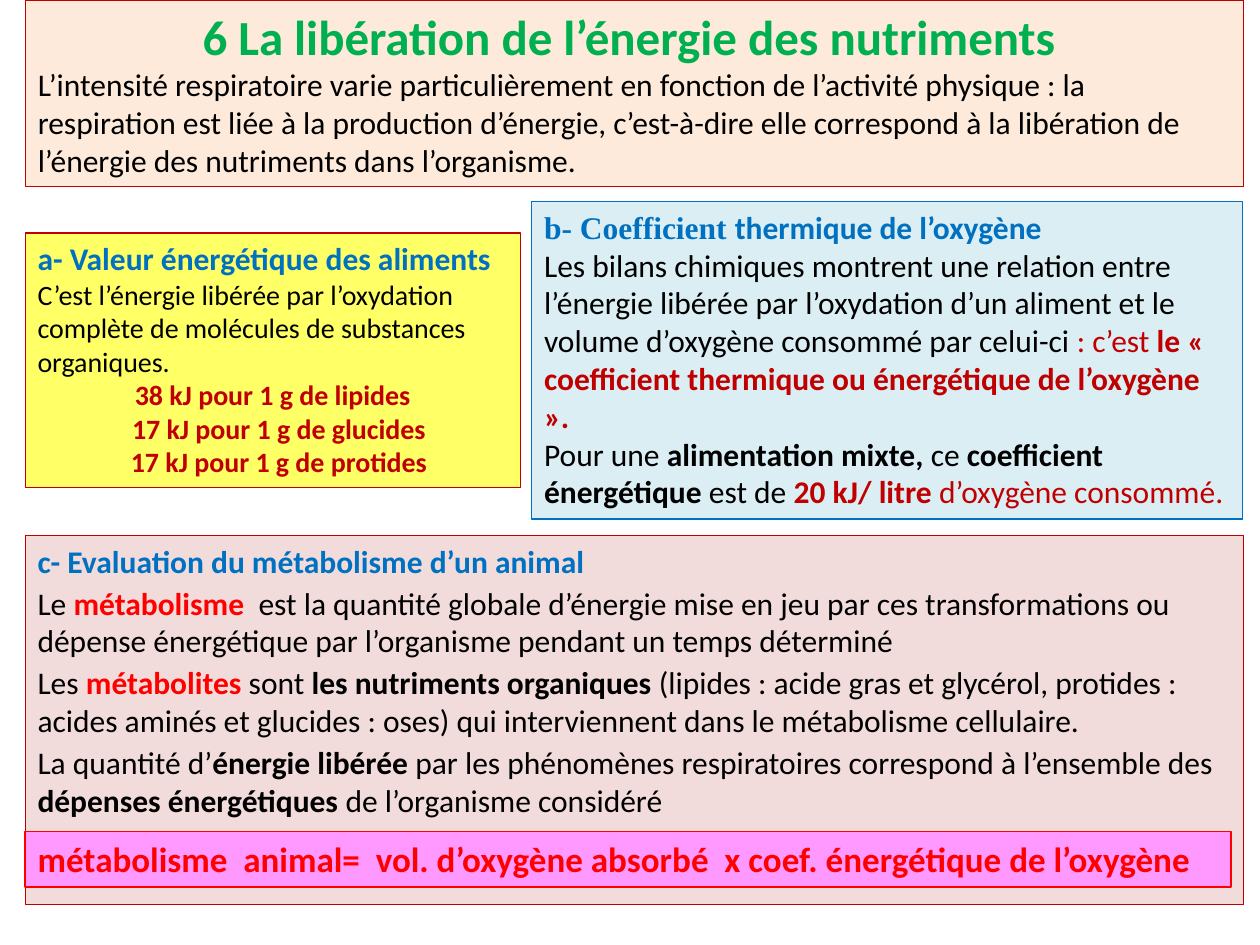
from pptx import Presentation
from pptx.dml.color import RGBColor
from pptx.enum.shapes import MSO_SHAPE
from pptx.enum.text import MSO_ANCHOR, MSO_AUTO_SIZE, PP_ALIGN
from pptx.util import Inches, Pt

BLACK = RGBColor(0x00, 0x00, 0x00)
GREEN = RGBColor(0x00, 0xB0, 0x50)
BLUE = RGBColor(0x00, 0x70, 0xC0)
DARK_RED = RGBColor(0xC0, 0x00, 0x00)
RED = RGBColor(0xFF, 0x00, 0x00)
PEACH = RGBColor(0xFD, 0xEA, 0xDA)
YELLOW = RGBColor(0xFF, 0xFF, 0x66)
PALE_BLUE = RGBColor(0xDB, 0xEE, 0xF4)
ROSE = RGBColor(0xF2, 0xDC, 0xDB)
PINK = RGBColor(0xFF, 0x99, 0xFF)

BODY_FONT = "Calibri"
FRAME = {"word_wrap": True, "vertical_anchor": MSO_ANCHOR.TOP,
         "auto_size": MSO_AUTO_SIZE.SHAPE_TO_FIT_TEXT,
         "margin_left": Inches(0.1), "margin_right": Inches(0.1),
         "margin_top": Inches(0.05), "margin_bottom": Inches(0.05)}
ITEM_GAP = Pt(2.4)

# Run styles: (bold, colour)
PLAIN = (False, BLACK)
STRONG = (True, BLACK)
HEADING = (True, BLUE)
KEY = (True, DARK_RED)
KEY_PLAIN = (False, DARK_RED)
TERM = (True, RED)


def style_panel(panel, box, fill, outline, width=0.75):
    """Place a panel, colour it and return its prepared text frame."""
    panel.left, panel.top, panel.width, panel.height = (Inches(v) for v in box)
    panel.fill.solid()
    panel.fill.fore_color.rgb = fill
    panel.line.color.rgb = outline
    panel.line.width = Pt(width)
    for name, value in FRAME.items():
        setattr(panel.text_frame, name, value)
    return panel.text_frame


def add_panel(slide, box, fill, outline, width=0.75):
    panel = slide.shapes.add_shape(MSO_SHAPE.RECTANGLE, *(Inches(v) for v in box))
    panel.shadow.inherit = False
    return style_panel(panel, box, fill, outline, width)


def write(frame, runs, size=18, align=PP_ALIGN.LEFT, gap=Pt(0), indent=0):
    """Add one paragraph made of (text, style[, font]) runs."""
    first = not frame.text
    paragraph = frame.paragraphs[0] if first else frame.add_paragraph()
    paragraph.alignment = align
    paragraph.space_before = Pt(0) if first else gap
    if indent:
        paragraph._p.get_or_add_pPr().set("marL", str(Inches(indent)))
    for text, (bold, colour), *font in runs:
        run = paragraph.add_run()
        run.text = text
        run.font.color.rgb = colour
        look = {"name": font[0] if font else BODY_FONT, "size": Pt(size), "bold": bold}
        for name, value in look.items():
            setattr(run.font, name, value)


def fill_header(slide, box):
    frame = style_panel(slide.shapes.title, box, PEACH, DARK_RED)
    write(frame, [("6 La libération de l’énergie des nutriments ", (True, GREEN))],
          size=28, align=PP_ALIGN.CENTER)
    write(frame, [("L’intensité respiratoire varie particulièrement en fonction de "
                   "l’activité physique : la respiration est liée à la production "
                   "d’énergie, c’est-à-dire elle correspond à la libération de "
                   "l’énergie des nutriments dans l’organisme.", PLAIN)])


def add_energy_value(slide, box):
    frame = add_panel(slide, box, YELLOW, DARK_RED)
    write(frame, [("a- Valeur énergétique des aliments", HEADING)])
    write(frame, [("C’est l’énergie libérée par l’oxydation complète de molécules "
                   "de substances organiques.", PLAIN)], size=16)
    for energy, nutrient, indent in ((38, "lipides", 0), (17, "glucides", 0.1),
                                     (17, "protides", 0.1)):
        write(frame, [(f"{energy} kJ pour 1 g de {nutrient}", KEY)],
              size=16, align=PP_ALIGN.CENTER, indent=indent)


def add_oxygen_coefficient(slide, box):
    frame = add_panel(slide, box, PALE_BLUE, BLUE)
    write(frame, [("b- Coefficient ", HEADING, "Times New Roman"),
                  ("thermique de l’oxygène", HEADING)])
    write(frame, [("Les bilans chimiques montrent une relation entre l’énergie libérée "
                   "par l’oxydation d’un aliment et le volume d’oxygène consommé par "
                   "celui-ci", PLAIN),
                  (" : c’est ", KEY_PLAIN),
                  ("le « coefficient thermique ou énergétique de l’oxygène ».", KEY)])
    write(frame, [("Pour une ", PLAIN), ("alimentation mixte, ", STRONG),
                  ("ce ", PLAIN), ("coefficient énergétique", STRONG),
                  (" est de ", PLAIN), ("20 kJ/ litre ", KEY),
                  ("d’oxygène consommé.", KEY_PLAIN)])


def add_metabolism(slide, box):
    left, top, width, _ = box
    frame = add_panel(slide, box, ROSE, DARK_RED)
    paragraphs = (
        [("c- Evaluation du métabolisme d’un animal", HEADING)],
        [("Le ", PLAIN), ("métabolisme", TERM),
         ("  est la quantité globale d’énergie mise en jeu par ces transformations ou "
          "dépense énergétique par l’organisme pendant un temps déterminé", PLAIN)],
        [("Les ", PLAIN), ("métabolites ", TERM), ("sont ", PLAIN),
         ("les nutriments organiques ", STRONG),
         ("(lipides : acide gras et glycérol, protides : acides aminés et glucides : "
          "oses) qui interviennent dans le métabolisme cellulaire.", PLAIN)],
        [("La quantité d’", PLAIN), ("énergie libérée ", STRONG),
         ("par les phénomènes respiratoires correspond à l’ensemble des ", PLAIN),
         ("dépenses énergétiques ", STRONG), ("de l’organisme considéré", PLAIN)],
    )
    for runs in paragraphs:
        write(frame, runs, gap=ITEM_GAP)

    # Formula band at the foot of the panel
    formula = add_panel(slide, (left, top + 2.35, width - 0.1, 0.44), PINK, RED, width=1)
    write(formula, [("métabolisme  animal=  vol. d’oxygène absorbé  x coef. "
                     "énergétique de l’oxygène", TERM)], size=20)


def main():
    deck = Presentation()
    deck.slide_width, deck.slide_height = Inches(10), Inches(7.5)
    slide = deck.slides.add_slide(deck.slide_layouts[5])
    fill_header(slide, (0.2, 0, 9.67, 1.48))
    add_energy_value(slide, (0.2, 1.85, 3.93, 2.02))
    add_oxygen_coefficient(slide, (4.22, 1.6, 5.64, 2.52))
    add_metabolism(slide, (0.2, 4.25, 9.67, 2.93))
    deck.save("out.pptx")


if __name__ == "__main__":
    main()
